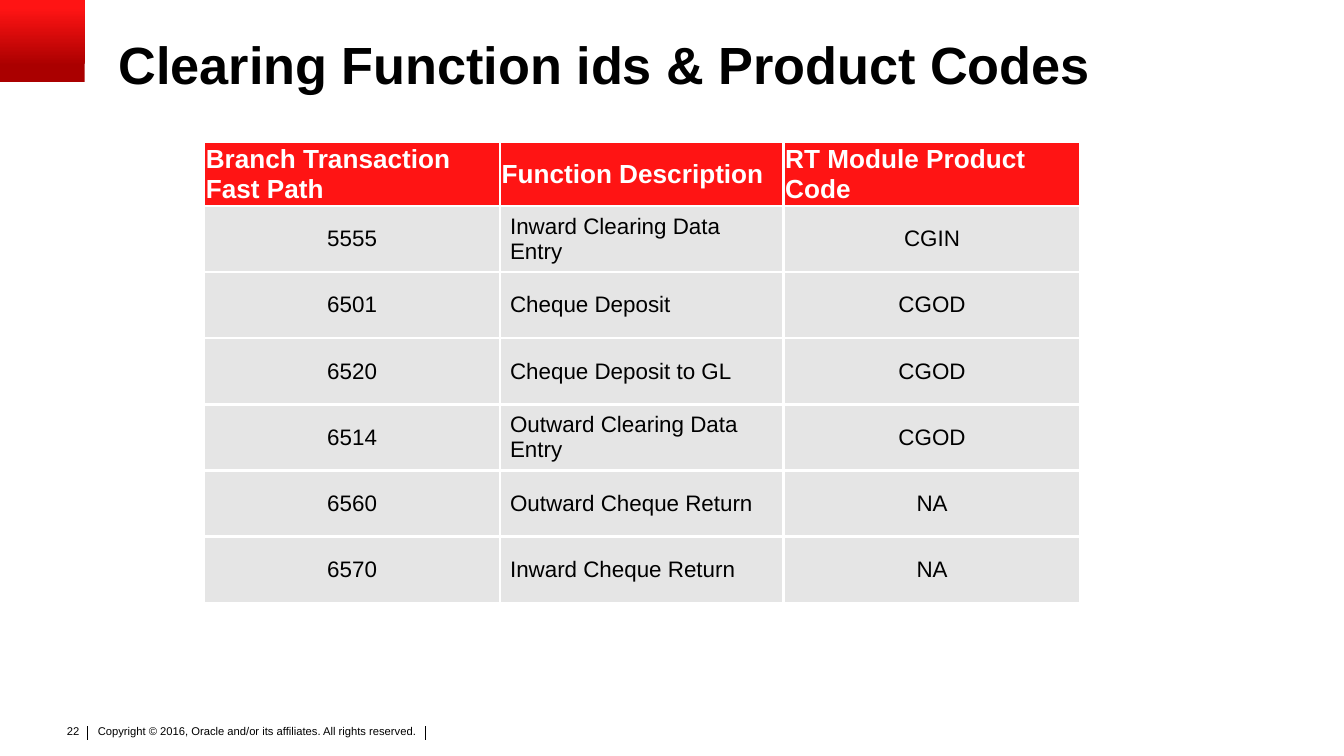
"""Build the slide listing clearing function ids and product codes."""
import pptx
import pptx.dml.color
import pptx.enum.shapes
import pptx.enum.text
import pptx.oxml
import pptx.oxml.ns
import pptx.util

Cm, Pt = pptx.util.Cm, pptx.util.Pt
ALIGN = pptx.enum.text.PP_ALIGN
ANCHOR = pptx.enum.text.MSO_ANCHOR

TITLE = "Clearing Function ids & Product Codes"
HEADER = ("Branch Transaction Fast Path", "Function Description", "RT Module Product Code")
ROWS = [
    ("5555", "Inward Clearing Data Entry", "CGIN"),
    ("6501", "Cheque Deposit", "CGOD"),
    ("6520", "Cheque Deposit to GL", "CGOD"),
    ("6514", "Outward Clearing Data Entry", "CGOD"),
    ("6560", "Outward Cheque Return", "NA"),
    ("6570", "Inward Cheque Return", "NA"),
]
FOOTER = [
    ("Copyright © 2016, Oracle and/or its affiliates. All rights reserved.",
     (1.75, 13.64, 6.96, 0.61), (0.1, 0.05, 0.1, 0.05), ALIGN.LEFT, True),
    ("22", (0.99, 13.56, 0.76, 0.51), (0.25, 0.13, 0.25, 0.13), ALIGN.RIGHT, False),
]
DIVIDERS = (1.65, 8.04)
COL_WIDTHS = (5.59, 5.36, 5.61)
HEADER_HEIGHT, ROW_HEIGHT = 1.14, 1.25
COL_ALIGN = (ALIGN.CENTER, ALIGN.LEFT, ALIGN.CENTER)
BLACK, WHITE, RED, DARK_RED, GREY = "000000", "FFFFFF", "FF1414", "AA0000", "E5E5E5"


def rgb(value):
    return pptx.dml.color.RGBColor.from_string(value)


def cms(values):
    return [Cm(v) for v in values]


def write(tf, text, size, color=BLACK, bold=False, align=ALIGN.LEFT):
    p = tf.paragraphs[0]
    p.alignment = align
    r = p.add_run()
    r.text = text
    r.font.name, r.font.size, r.font.bold = "Arial", Pt(size), bold
    r.font.color.rgb = rgb(color)
    return p


def set_margins(obj, margins):
    obj.margin_left, obj.margin_top, obj.margin_right, obj.margin_bottom = cms(margins)


def add_borders(cell, color, width):
    tcPr = cell._tc.get_or_add_tcPr()
    for side in "LRTB":
        tcPr.append(pptx.oxml.parse_xml(
            f'<a:ln{side} {pptx.oxml.ns.nsdecls("a")} w="{Pt(width)}"><a:solidFill>'
            f'<a:srgbClr val="{color}"/></a:solidFill></a:ln{side}>'))


def add_corner(s):
    sp = s.shapes.add_shape(pptx.enum.shapes.MSO_SHAPE.RECTANGLE, *cms((0, 0, 1.6, 1.55)))
    sp.shadow.inherit = False
    sp.line.fill.background()
    sp.fill.gradient()
    sp.fill.gradient_angle = 90
    for stop, (pos, color) in zip(sp.fill.gradient_stops, ((0.2, DARK_RED), (0.9, RED))):
        stop.position = pos
        stop.color.rgb = rgb(color)


def add_title(s):
    sp = s.shapes.title
    sp.left, sp.top, sp.width, sp.height = cms((2.24, 0.69, 22.86, 1.12))
    tf = sp.text_frame
    tf.auto_size = pptx.enum.text.MSO_AUTO_SIZE.NONE
    tf.vertical_anchor = ANCHOR.BOTTOM
    set_margins(tf, (0, 0, 0, 0))
    write(tf, TITLE, 28, bold=True).line_spacing = 0.9


def add_codes_table(s):
    heights = [HEADER_HEIGHT] + [ROW_HEIGHT] * len(ROWS)
    table = s.shapes.add_table(len(heights), len(COL_WIDTHS), Cm(3.86), Cm(2.67),
                               Cm(sum(COL_WIDTHS)), Cm(sum(heights))).table
    table.horz_banding = False
    for col, width in zip(table.columns, COL_WIDTHS):
        col.width = Cm(width)
    for i, (height, values) in enumerate(zip(heights, [HEADER] + ROWS)):
        table.rows[i].height = Cm(height)
        for j, text in enumerate(values):
            cell = table.cell(i, j)
            add_borders(cell, WHITE, 1.5)
            cell.fill.solid()
            cell.fill.fore_color.rgb = rgb(GREY if i else RED)
            cell.vertical_anchor = ANCHOR.MIDDLE
            if i:
                set_margins(cell, (0.19, 0, 0.19, 0))
                write(cell.text_frame, text, 12, align=COL_ALIGN[j])
            else:
                set_margins(cell, (0.03, 0.03, 0.03, 0))
                write(cell.text_frame, text, 14, WHITE, True)


def add_footer(s):
    for text, place, margins, align, wrap in FOOTER:
        tf = s.shapes.add_textbox(*cms(place)).text_frame
        tf.word_wrap = wrap
        set_margins(tf, margins)
        write(tf, text, 6, align=align)
    for x in DIVIDERS:
        line = s.shapes.add_connector(pptx.enum.shapes.MSO_CONNECTOR.STRAIGHT,
                                      *cms((x, 13.72, x, 13.97)))
        line.line.color.rgb = rgb(BLACK)
        line.line.width = Pt(0.5)
        line._element.spPr.append(
            pptx.oxml.parse_xml(f'<a:effectLst {pptx.oxml.ns.nsdecls("a")}/>'))


def main():
    prs = pptx.Presentation()
    prs.slide_width, prs.slide_height = cms((25.4, 14.28))
    s = prs.slides.add_slide(prs.slide_layouts[5])
    add_footer(s)
    add_corner(s)
    add_title(s)
    add_codes_table(s)
    prs.save("out.pptx")


if __name__ == "__main__":
    main()
